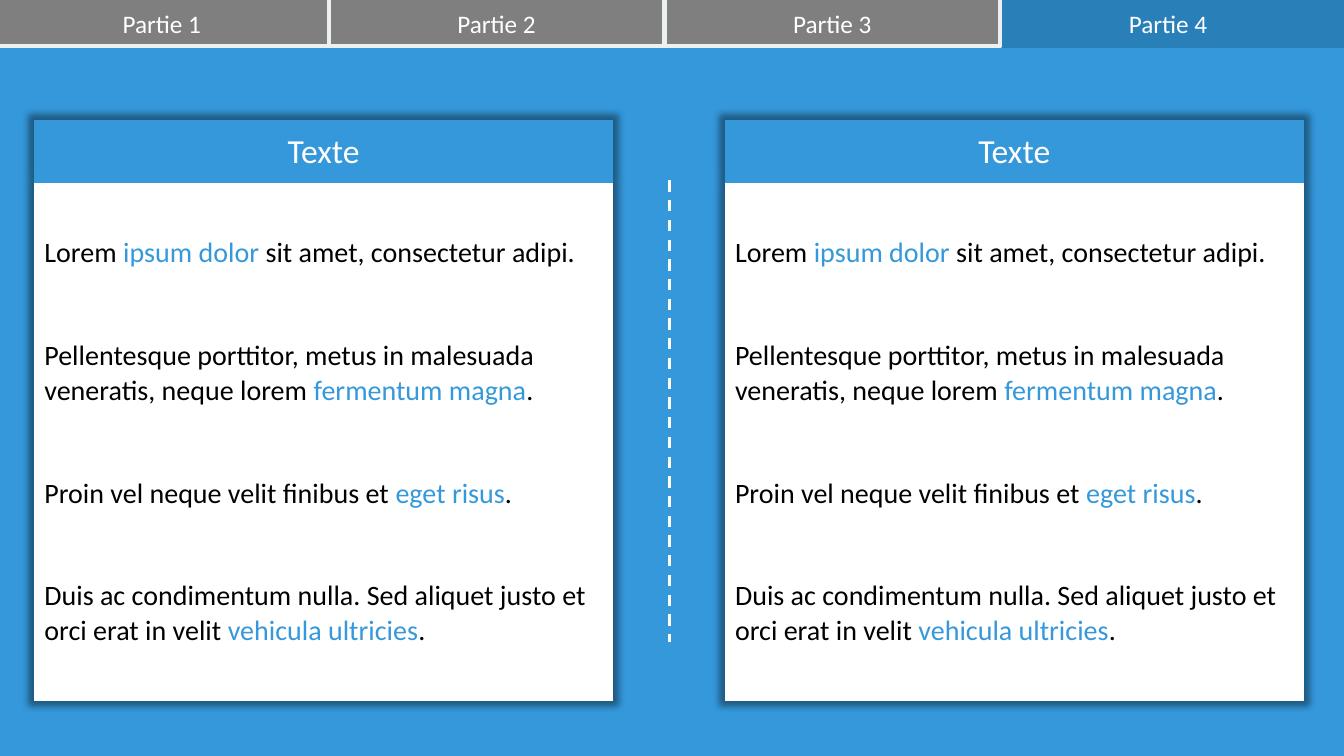
from lxml import etree
from pptx import Presentation, util as u
from pptx.dml.color import RGBColor
from pptx.enum import dml, shapes, text
from pptx.oxml import ns

BLUE = RGBColor(0x34, 0x98, 0xDB)
DARK_BLUE = RGBColor(0x29, 0x80, 0xB9)
GREY = RGBColor(0x7F, 0x7F, 0x7F)
CLOUD = RGBColor(0xEC, 0xF0, 0xF1)
WHITE = RGBColor(0xFF, 0xFF, 0xFF)
BLACK = RGBColor(0, 0, 0)

NO_STYLE = "{2D5ABB26-0587-4C30-8999-92F81FD0307C}"
SHADOW = (
    f'<a:effectLst {ns.nsdecls("a")}><a:outerShdw blurRad="63500" sx="102000" sy="102000" '
    'algn="ctr" rotWithShape="0"><a:srgbClr val="000000"><a:alpha val="40000"/>'
    '</a:srgbClr></a:outerShdw></a:effectLst>'
)

TAB_LEFTS = [-6, 326, 659, 992]
TAB_WIDTH = 333
PARAGRAPHS = [
    [("Lorem ", BLACK), ("ipsum dolor ", BLUE), ("sit amet, consectetur adipi.", BLACK)],
    [("Pellentesque porttitor, metus in malesuada veneratis, neque lorem ", BLACK),
     ("fermentum magna", BLUE), (".", BLACK)],
    [("Proin vel neque velit finibus et ", BLACK), ("eget risus", BLUE), (".", BLACK)],
    [("Duis ac condimentum nulla. Sed aliquet justo et orci erat in velit ", BLACK),
     ("vehicula ultricies", BLUE), (".", BLACK)],
]


class Deck:
    """Holds the slide style and draws each kind of element, in px of 1/100 inch."""

    scale = 9144
    font = "Calibri"

    def __init__(self, width, height):
        self.prs = Presentation()
        self.prs.slide_width, self.prs.slide_height = self.px(width, height)
        self.s = None

    def px(self, *lengths):
        return [u.Emu(n * self.scale) for n in lengths]

    def slide(self, color):
        self.s = self.prs.slides.add_slide(self.prs.slide_layouts[6])
        self.s.background.fill.solid()
        self.s.background.fill.fore_color.rgb = color

    def add_runs(self, p, runs, size, align=text.PP_ALIGN.LEFT):
        p.alignment = align
        for words, color in runs:
            r = p.add_run()
            r.text = words
            r.font.name = self.font
            r.font.size = u.Pt(size)
            r.font.color.rgb = color

    def rect(self, x, y, w, h, fill, line):
        sp = self.s.shapes.add_shape(shapes.MSO_SHAPE.RECTANGLE, *self.px(x, y, w, h))
        sp.shadow.inherit = False
        sp.fill.solid()
        sp.fill.fore_color.rgb = fill
        sp.line.color.rgb = line
        sp.line.width = u.Pt(3)

    def label(self, x, y, w, h, words):
        tf = self.s.shapes.add_textbox(*self.px(x, y, w, h)).text_frame
        tf.word_wrap = True
        self.add_runs(tf.paragraphs[0], [(words, WHITE)], 18, text.PP_ALIGN.CENTER)

    def cell(self, cell, fill):
        cell.fill.solid()
        cell.fill.fore_color.rgb = fill
        cell.vertical_anchor = text.MSO_ANCHOR.MIDDLE
        return cell.text_frame

    def card(self, x, y, w, heights, heading, paragraphs):
        frame = self.s.shapes.add_table(2, 1, *self.px(x, y, w, sum(heights)))
        table = frame.table
        table.first_row = table.horz_banding = False
        props = table._tbl.tblPr
        props.find(ns.qn("a:tableStyleId")).text = NO_STYLE
        props.insert(0, etree.fromstring(SHADOW))
        for row, height in zip(table.rows, self.px(*heights)):
            row.height = height
        head = self.cell(table.cell(0, 0), BLUE)
        self.add_runs(head.paragraphs[0], [(heading, WHITE)], 24, text.PP_ALIGN.CENTER)
        body = self.cell(table.cell(1, 0), WHITE)
        for i, runs in enumerate(paragraphs):
            p = body.add_paragraph() if i else body.paragraphs[0]
            p.space_before = u.Pt(49 if i else 6)
            self.add_runs(p, runs, 20)

    def dashes(self, x1, y1, x2, y2):
        line = self.s.shapes.add_connector(
            shapes.MSO_CONNECTOR.STRAIGHT, *self.px(x1, y1, x2, y2))
        line.line.color.rgb = WHITE
        line.line.width = u.Pt(2)
        line.line.dash_style = dml.MSO_LINE.DASH
        etree.SubElement(line._element.spPr, ns.qn("a:effectLst"))


def main():
    deck = Deck(1333, 750)
    deck.slide(BLUE)
    deck.rect(TAB_LEFTS[-1], -5, 347, 51, DARK_BLUE, DARK_BLUE)
    for left in TAB_LEFTS[:-1]:
        deck.rect(left, -5, TAB_WIDTH, 51, GREY, CLOUD)
    for number, left in enumerate(TAB_LEFTS, 1):
        deck.label(left, 3, TAB_WIDTH, 40, f"Partie {number}")
    for left in (34, 719):
        deck.card(left, 119, 574, (63, 513), "Texte", PARAGRAPHS)
    deck.dashes(664, 179, 664, 637)
    deck.prs.save("out.pptx")


if __name__ == "__main__":
    main()
